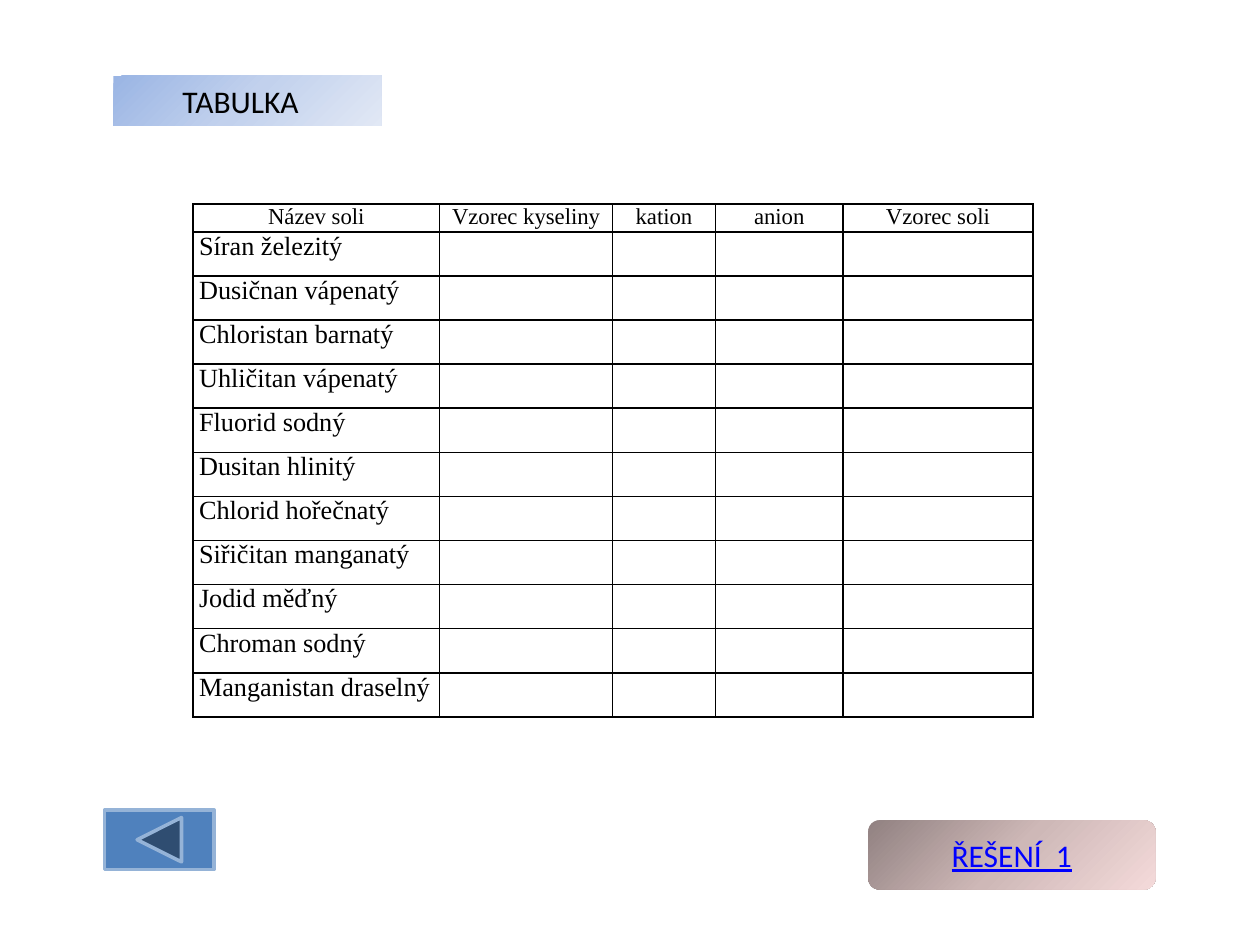
from lxml import etree
from pptx import Presentation
from pptx.dml.color import RGBColor
from pptx.enum import shapes, text
from pptx.oxml import ns
from pptx.util import Inches, Pt

SHAPE = shapes.MSO_SHAPE
HEADERS = ["Název soli", "Vzorec kyseliny", "kation", "anion", "Vzorec soli"]
SALTS = ["Síran železitý", "Dusičnan vápenatý", "Chloristan barnatý",
         "Uhličitan vápenatý", "Fluorid sodný", "Dusitan hlinitý",
         "Chlorid hořečnatý", "Siřičitan manganatý", "Jodid měďný",
         "Chroman sodný", "Manganistan draselný"]
COLUMN_WIDTHS = [1.96, 1.37, 0.82, 1.01, 1.51]
HEADER_HEIGHT, ROW_HEIGHT = 0.22, 0.35


def color(hex_value):
    return RGBColor.from_string(hex_value)


def sub(parent, tag, **attrs):
    return etree.SubElement(parent, ns.qn(tag), attrs)


def add_run(p, content, size, font, hex_value):
    r = p.add_run()
    r.text = content
    r.font.size = Pt(size)
    r.font.name = font
    r.font.color.rgb = color(hex_value)
    return r


def add_box(s, kind, box):
    sp = s.shapes.add_shape(kind, *map(Inches, box))
    sp.shadow.inherit = False
    return sp


def gradient_fill(sp, stops):
    """Diagonal gradient with evenly spaced stops and no outline."""
    sp.fill.gradient()
    sp.fill.gradient_angle = 315
    gs_list = sp._element.spPr.find(ns.qn("a:gradFill")).find(ns.qn("a:gsLst"))
    for gs in list(gs_list):
        gs_list.remove(gs)
    for i, hex_value in enumerate(stops):
        gs = sub(gs_list, "a:gs", pos=str(100000 * i // (len(stops) - 1)))
        sub(gs, "a:srgbClr", val=hex_value)
    sp.line.fill.background()


def border_cell(cell, hex_value="000000", width=1):
    tc_pr = cell._tc.get_or_add_tcPr()
    for i, side in enumerate(("a:lnL", "a:lnR", "a:lnT", "a:lnB")):
        ln = etree.Element(ns.qn(side), w=str(Pt(width)))
        sub(sub(ln, "a:solidFill"), "a:srgbClr", val=hex_value)
        tc_pr.insert(i, ln)  # borders come before the fill


def title(s, box):
    sp = add_box(s, SHAPE.RECTANGLE, box)
    gradient_fill(sp, ["9AB5E4", "C2D1ED", "E1E8F5"])
    tf = sp.text_frame
    tf.vertical_anchor = text.MSO_ANCHOR.TOP
    p = tf.paragraphs[0]
    p.alignment = text.PP_ALIGN.LEFT
    p._p.get_or_add_pPr().set("marL", str(Inches(0.45)))
    add_run(p, "TABULKA", 18, "Calibri", "000000")


def salt_table(s, box):
    rows = [HEADERS] + [[salt] + [""] * (len(HEADERS) - 1) for salt in SALTS]
    frame = s.shapes.add_table(len(rows), len(HEADERS), *map(Inches, box))
    table = frame.table
    table.first_row = table.horz_banding = False
    for column, width in zip(table.columns, COLUMN_WIDTHS):
        column.width = Inches(width)
    for i, values in enumerate(rows):
        header = i == 0
        table.rows[i].height = Inches(HEADER_HEIGHT if header else ROW_HEIGHT)
        for j, value in enumerate(values):
            cell = table.cell(i, j)
            cell.fill.background()
            border_cell(cell)
            cell.margin_left = cell.margin_right = Inches(0.05)
            cell.margin_top = cell.margin_bottom = 0
            if value:
                p = cell.text_frame.paragraphs[0]
                p.alignment = text.PP_ALIGN.CENTER if header else text.PP_ALIGN.LEFT
                add_run(p, value, 13 if header else 15, "Times New Roman", "000000")


def solution_button(s, box):
    sp = add_box(s, SHAPE.ROUNDED_RECTANGLE, box)
    gradient_fill(sp, ["918181", "CEB8B7", "F4DADA"])
    tf = sp.text_frame
    tf.vertical_anchor = text.MSO_ANCHOR.MIDDLE
    p = tf.paragraphs[0]
    p.alignment = text.PP_ALIGN.CENTER
    add_run(p, "ŘEŠENÍ  1", 18, "Calibri", "0000FF").font.underline = True


def back_button(s, box):
    sp = add_box(s, SHAPE.ACTION_BUTTON_BACK_OR_PREVIOUS, box)
    sp.fill.solid()
    sp.fill.fore_color.rgb = color("4F81BD")
    sp.line.color.rgb = color("95B3D7")
    sp.line.width = Pt(2)


def main():
    prs = Presentation()
    prs.slide_width, prs.slide_height = Inches(10), Inches(7.5)
    s = prs.slides.add_slide(prs.slide_layouts[6])
    title(s, (0.9, 0.6, 2.13, 0.4))
    salt_table(s, (1.53, 1.62, sum(COLUMN_WIDTHS),
                   HEADER_HEIGHT + ROW_HEIGHT * len(SALTS)))
    # Navigation
    solution_button(s, (6.89, 6.51, 2.28, 0.55))
    back_button(s, (0.83, 6.43, 0.87, 0.47))
    prs.save("out.pptx")


if __name__ == "__main__":
    main()
